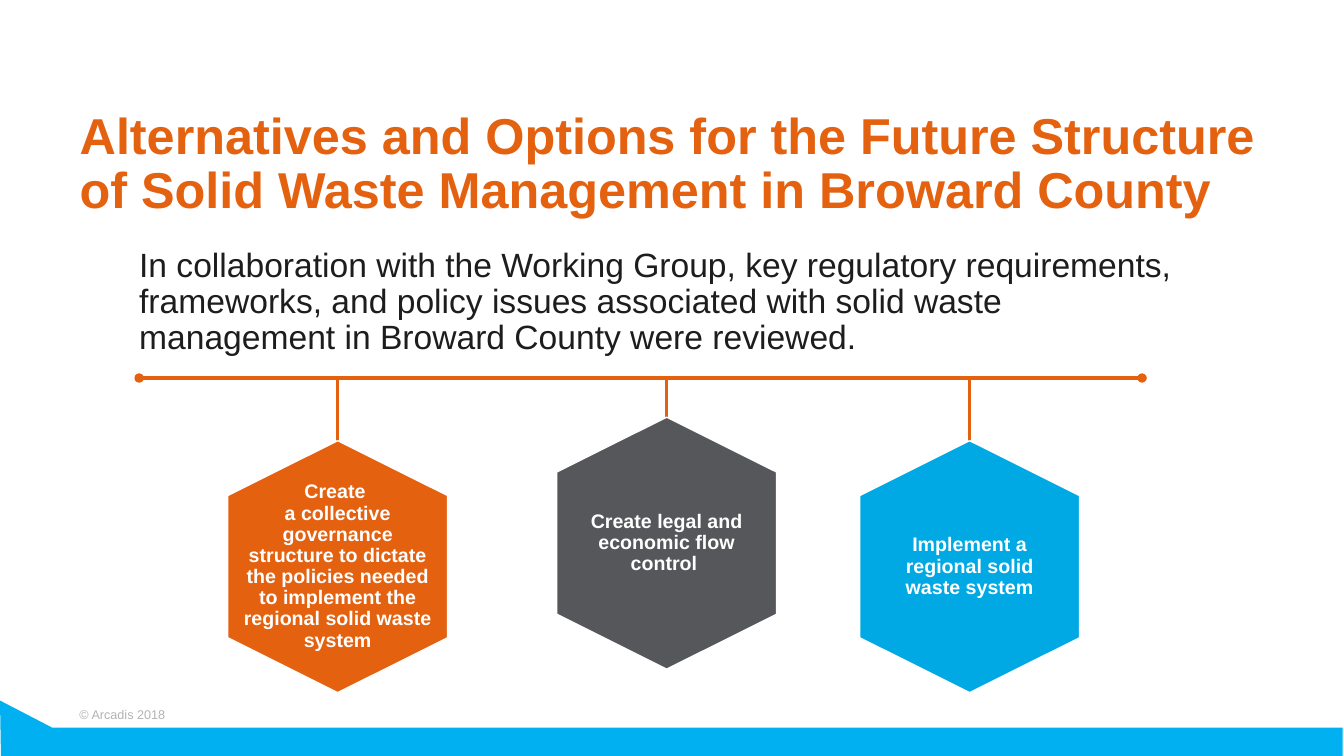
"""Build the slide on options for solid waste management."""
from copy import deepcopy
from lxml.etree import SubElement as Sub
from pptx import Presentation
from pptx.dml.color import RGBColor
from pptx.enum.shapes import MSO_CONNECTOR as Conn
from pptx.enum.text import MSO_ANCHOR as Anchor, MSO_AUTO_SIZE as Auto, PP_ALIGN as Align
from pptx.oxml.ns import qn
from pptx.util import Pt

ORANGE, WHITE = "E4610F", "FFFFFF"
TITLE = "Alternatives and Options for the Future Structure of Solid Waste Management in Broward County"
BODY = ("In collaboration with the Working Group, key regulatory requirements, frameworks, "
        "and policy issues associated with solid waste management in Broward County were reviewed.")
FOOT = "© Arcadis 2018"
GOALS = [
    ("Implement a regional solid waste system", 692.6, 314.8, "00A9E4", 15),
    ("Create \va collective governance structure to dictate the policies needed "
     "to implement the regional solid waste system", 241.2, 314.8, ORANGE, 7.2),
    ("Create legal and economic flow control ", 476.2, 298, "55575A", 15),
]
BAND = [(0, 500.4), (37.4, 519.8), (959, 519.8), (959, 540), (0.7, 540)]
RAIL, LEFT, RIGHT, DROP = 270, 99.4, 815.8, 337
WIDE, HIGH, EDGE = 157, 180, 39.2


def paint(target, hue):
    if hasattr(target, "solid"):
        target.solid()
        target = target.fore_color
    target.rgb = RGBColor.from_string(hue)


def write(shape, text, size, hue, bold=False, align=Align.LEFT, anchor=Anchor.TOP,
          inset=(0, 0), space=0.9, wrap=True, plain=False):
    frame = shape.text_frame
    frame.word_wrap, frame.auto_size = wrap, Auto.NONE
    frame.vertical_anchor = anchor
    frame.margin_left = frame.margin_right = Pt(inset[0])
    frame.margin_top = frame.margin_bottom = Pt(inset[1])
    para = frame.paragraphs[0]
    para.text = text
    para.alignment, para.line_spacing = align, space
    para.space_before = Pt(0)
    if plain:
        props = para._p.get_or_add_pPr()
        props.set("marL", "0")
        props.set("indent", "0")
        Sub(props, qn("a:buNone"))
    for run in para.runs:
        font = run.font
        font.name, font.size, font.bold = "Arial", Pt(size), bold
        paint(font.color, hue)
    for gap in para._p.findall(qn("a:br")):
        gap.append(deepcopy(para.runs[0]._r.rPr))


def place(shape, left, top, width, height):
    shape.left, shape.top = Pt(left), Pt(top)
    shape.width, shape.height = Pt(width), Pt(height)
    return shape


def outline(slide, dots, fill):
    dots = [(Pt(x), Pt(y)) for x, y in dots]
    path = slide.shapes.build_freeform(*dots[0])
    path.add_line_segments(dots[1:], close=True)
    shape = path.convert_to_shape()
    shape.shadow.inherit = False
    paint(shape.fill, fill)
    shape.line.fill.background()
    return shape


def rule(slide, x1, y1, x2, y2, ends=None):
    line = slide.shapes.add_connector(Conn.STRAIGHT, Pt(x1), Pt(y1), Pt(x2), Pt(y2))
    paint(line.line.fill, ORANGE)
    line.line.width = Pt(2.25)
    if ends:
        for tag in ("a:headEnd", "a:tailEnd"):
            Sub(line.line._get_or_add_ln(), qn(tag), type=ends)
    Sub(line._element.spPr, qn("a:effectLst"))


def goal(slide, text, mid, top, fill, pad):
    left, right, low = mid - WIDE / 2, mid + WIDE / 2, top + HIGH
    hexa = outline(slide, [(mid, top), (right, top + EDGE), (right, low - EDGE),
                           (mid, low), (left, low - EDGE), (left, top + EDGE)], fill)
    paint(hexa.line.fill, WHITE)
    hexa.line.width = Pt(1)
    write(hexa, text, 14, WHITE, bold=True, align=Align.CENTER,
          anchor=Anchor.MIDDLE, inset=(pad, 17.2))


def main():
    deck = Presentation()
    deck.slide_width, deck.slide_height = Pt(960), Pt(540)
    slide = deck.slides.add_slide(deck.slide_layouts[1])
    title = place(slide.shapes.title, 56.9, 79.2, 846.7, 49.7)
    write(title, TITLE, 36, ORANGE, bold=True)
    body = place(slide.placeholders[1], LEFT, 173.5, 740.2, 96.5)
    write(body, BODY, 24, "1D1D1D", inset=(0, 3.6), plain=True)
    foot = slide.shapes.add_textbox(Pt(49.7), Pt(501.1), Pt(77), Pt(18))
    write(foot, FOOT, 9, "B3B3B3", anchor=Anchor.MIDDLE, inset=(7.2, 3.6), space=1.0, wrap=False)
    outline(slide, BAND, "00B0F0")
    for _, mid, *_ in GOALS:
        rule(slide, mid, RAIL, mid, DROP)
    for item in GOALS:
        goal(slide, *item)
    rule(slide, LEFT, RAIL, RIGHT, RAIL, ends="oval")
    deck.save("out.pptx")


if __name__ == "__main__":
    main()
